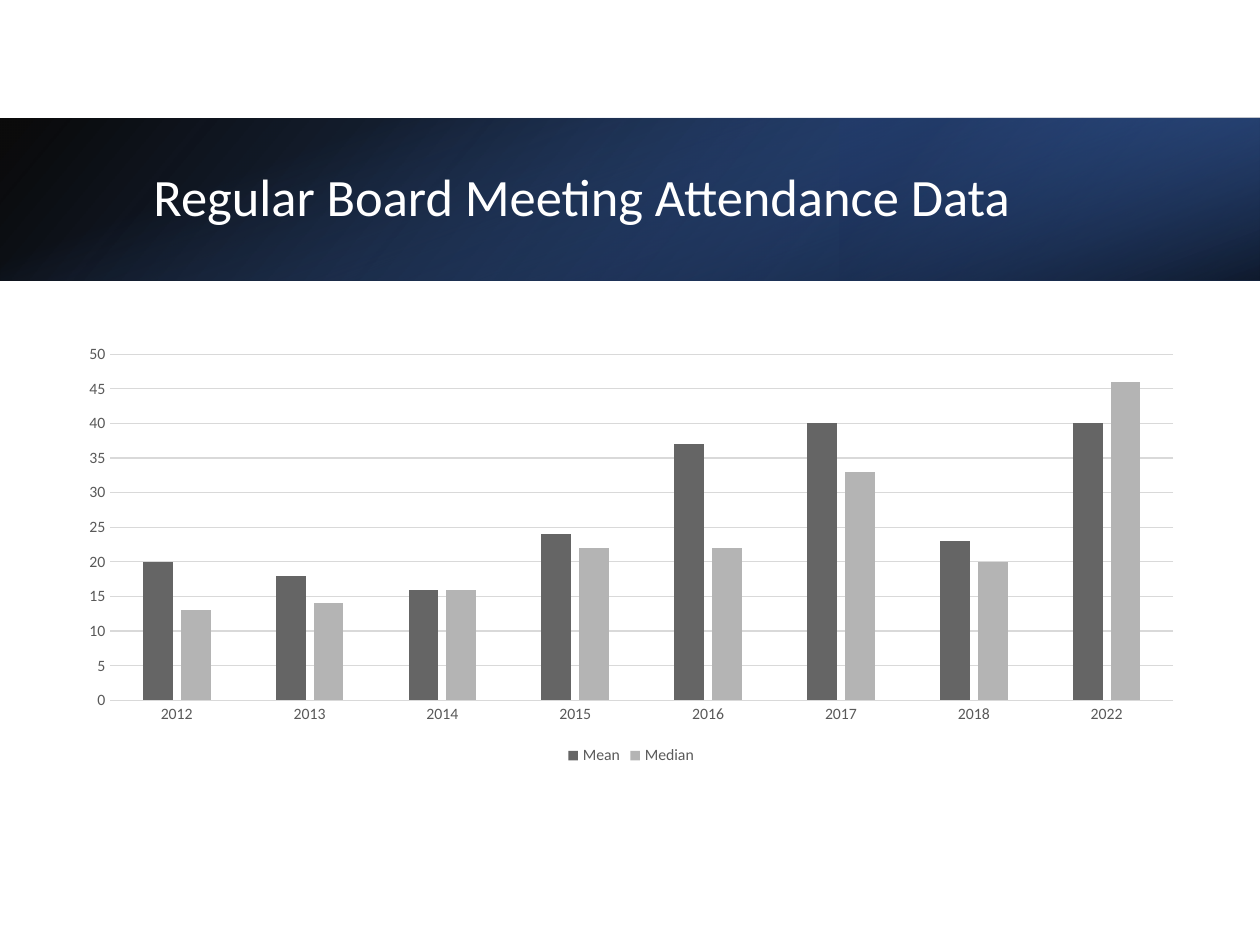
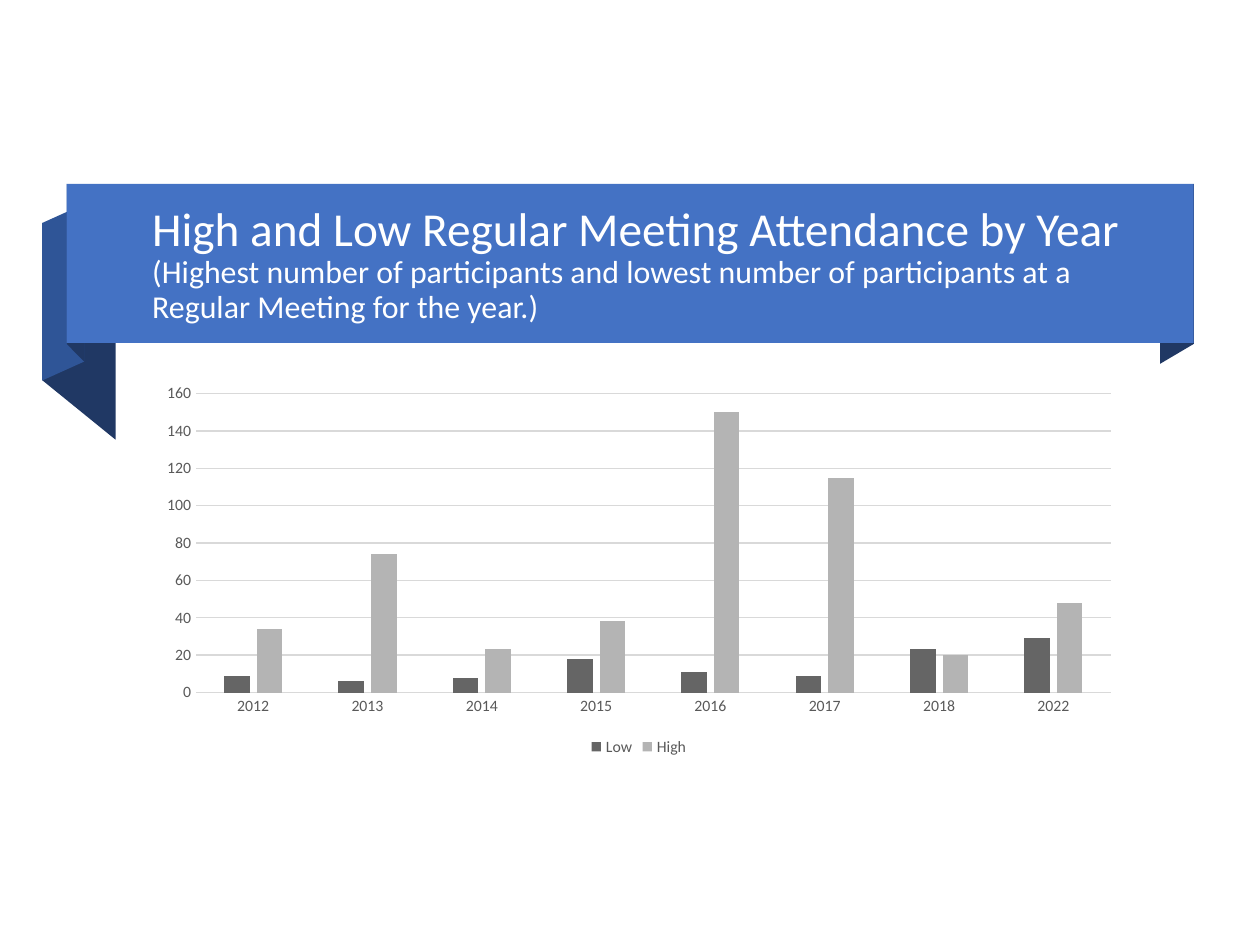
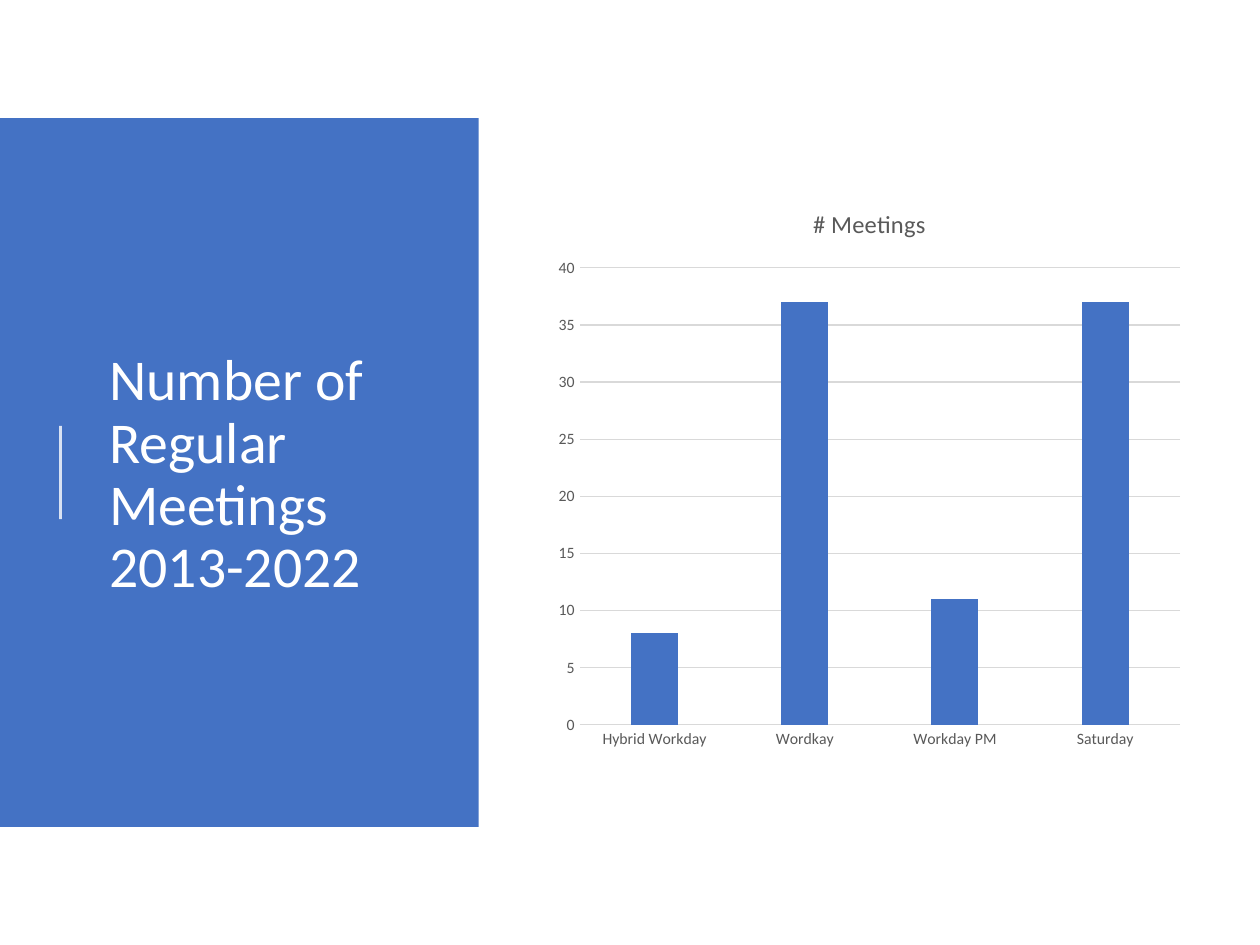
import dataclasses

import lxml.etree
import pptx
import pptx.chart.data
import pptx.dml.color
import pptx.enum.chart
import pptx.enum.shapes
import pptx.enum.text
import pptx.oxml.ns
import pptx.util


@dataclasses.dataclass(frozen=True)
class Theme:
    font: str = "Calibri"
    white: str = "FFFFFF"
    black: str = "000000"
    blue: str = "4472C4"
    deep: str = "2F5597"
    navy: str = "203864"
    dark: str = "656565"
    light: str = "B4B4B4"
    text: str = "595959"
    grid: str = "D9D9D9"
    label: float = 9
    base: float = 10
    head: float = 14
    sub: float = 18.2
    small: float = 27
    mid: float = 30
    large: float = 33


THEME = Theme()
WIDTH, HEIGHT = pptx.util.Inches(10), pptx.util.Inches(7.5)
COLS, ROWS = 40, 30
TOP = 3.75  # first row of the wide band and the side panel
YEARS = ["2012", "2013", "2014", "2015", "2016", "2017", "2018", "2022"]


# Grid and colour helpers
def col(num):
    return round(WIDTH * num / COLS)


def row(num):
    return round(HEIGHT * num / ROWS)


def place(left, top, wide, high):
    return col(left), row(top), col(wide), row(high)


def rgb(code):
    return pptx.dml.color.RGBColor.from_string(code)


def node(parent, tag, **attrs):
    child = lxml.etree.SubElement(parent, pptx.oxml.ns.qn(tag))
    for key, value in attrs.items():
        child.set(key, str(value))
    return child


def style(font, size, color):
    font.name, font.size = THEME.font, pptx.util.Pt(size)
    font.color.rgb = rgb(color)


# Shapes
def paint(shape, color):
    shape.shadow.inherit = False
    shape.fill.solid()
    shape.fill.fore_color.rgb = rgb(color)
    shape.line.fill.background()


def block(shapes, box, color):
    kind = pptx.enum.shapes.MSO_SHAPE.RECTANGLE
    shape = shapes.add_shape(kind, *place(*box))
    paint(shape, color)
    return shape


def fade(shape, stops, angle):
    """Fill with a gradient; each stop is position, colour, opacity."""
    props = shape._element.spPr
    old = props.find(pptx.oxml.ns.qn("a:solidFill"))
    grad = lxml.etree.Element(pptx.oxml.ns.qn("a:gradFill"), rotWithShape="1")
    marks = node(grad, "a:gsLst")
    for pos, color, alpha in stops:
        stop = node(marks, "a:gs", pos=pos * 1000)
        tint = node(stop, "a:srgbClr", val=color)
        node(tint, "a:alpha", val=alpha * 1000)
    node(grad, "a:lin", ang=angle * 60000, scaled=0)
    props.replace(old, grad)


def flip(shape):
    shape._element.spPr.find(pptx.oxml.ns.qn("a:xfrm")).set("flipH", "1")


def fold(shapes, start, end, drop, color):
    """Ribbon fold with two upright sides of equal length."""
    (left, high), (right, low) = start, end
    spots = [(left, high), (left, high + drop), (right, low + drop), (right, low)]
    spots = [(col(x), row(y)) for x, y in spots]
    path = shapes.build_freeform(*spots[0], scale=1.0)
    path.add_line_segments(spots[1:], close=True)
    paint(path.convert_to_shape(), color)


def rule(slide, start, end, color, alpha):
    kind = pptx.enum.shapes.MSO_CONNECTOR.STRAIGHT
    line = slide.shapes.add_connector(
        kind, col(start[0]), row(start[1]), col(end[0]), row(end[1]))
    line.line.width = pptx.util.Pt(1.5)
    line.line.color.rgb = rgb(color)
    props = line._element.spPr
    for tint in props.iter(pptx.oxml.ns.qn("a:srgbClr")):
        node(tint, "a:alpha", val=alpha * 1000)
    node(props, "a:effectLst")


def title(slide, box, *parts):
    """Title on the coloured ground; each part is wording and size."""
    frame = slide.shapes.add_textbox(*place(*box)).text_frame
    frame.word_wrap = True
    frame.vertical_anchor = pptx.enum.text.MSO_ANCHOR.MIDDLE
    para = frame.paragraphs[0]
    para.line_spacing = 0.9
    for words, size in parts:
        run = para.add_run()
        run.text = words
        style(run.font, size, THEME.white)


# Charts
def chart(slide, box, cats, series, top, step, head=None):
    """Column chart; each series is name, values, colour."""
    data = pptx.chart.data.CategoryChartData()
    data.categories = cats
    for name, vals, _ in series:
        data.add_series(name, vals)
    kind = pptx.enum.chart.XL_CHART_TYPE.COLUMN_CLUSTERED
    graph = slide.shapes.add_chart(kind, *place(*box), data).chart
    style(graph.font, THEME.base, THEME.black)

    plot = graph.plots[0]
    plot.gap_width, plot.overlap = 219, -27
    plot.vary_by_categories = False
    for bars, (_, _, color) in zip(plot.series, series):
        bars.format.fill.solid()
        bars.format.fill.fore_color.rgb = rgb(color)

    cat, val = graph.category_axis, graph.value_axis
    for axis in (cat, val):
        axis.major_tick_mark = pptx.enum.chart.XL_TICK_MARK.NONE
        axis.minor_tick_mark = pptx.enum.chart.XL_TICK_MARK.NONE
        style(axis.tick_labels.font, THEME.label, THEME.text)
    val.minimum_scale, val.maximum_scale, val.major_unit = 0, top, step
    val.has_major_gridlines = True
    for line in (cat.format.line, val.major_gridlines.format.line):
        line.width = pptx.util.Pt(0.75)
        line.color.rgb = rgb(THEME.grid)
    val.format.line.fill.background()

    graph.has_title = head is not None
    if head:
        graph.chart_title.text_frame.text = head
        run = graph.chart_title.text_frame.paragraphs[0].runs[0]
        style(run.font, THEME.head, THEME.text)
        run.font.bold = False
        graph.chart_title.include_in_layout = False
    graph.has_legend = len(series) > 1
    if graph.has_legend:
        graph.legend.position = pptx.enum.chart.XL_LEGEND_POSITION.BOTTOM
        graph.legend.include_in_layout = False
        style(graph.legend.font, THEME.label, THEME.text)


# Title grounds
def band(slide, high=5.16):
    """Full-width band of three layered gradients."""
    shapes = slide.shapes
    base = block(shapes, (0, TOP, COLS, high), THEME.deep)
    fade(base, [(0, THEME.black, 96), (100, THEME.deep, 100)], 140)
    flip(base)

    third = COLS / 3
    glow = block(shapes, (COLS - third, TOP, third, high), THEME.blue)
    fade(glow, [(19, THEME.navy, 68), (100, THEME.blue, 79)], 320)
    flip(glow)
    glow.rotation = 180

    left, top = (COLS - high) / 2, TOP + (high - COLS) / 2
    shade = block(shapes, (left, top, high, COLS), THEME.blue)
    fade(shade, [(23, THEME.blue, 0), (99, THEME.black, 74)], 340)
    shade.rotation = 90


def ribbon(slide):
    shapes = slide.shapes.add_group_shape().shapes
    fold(shapes, (37.9, 5.84), (36.83, 6.47), 5.08, THEME.navy)
    fold(shapes, (3.67, 9), (1.34, 7.11), 4.96, THEME.navy)
    fold(shapes, (2.67, 6.48), (1.34, 7.08), 5, THEME.deep)
    fold(shapes, (2.67, 6.4), (2.12, 5.84), 5.08, THEME.navy)
    block(shapes, (2.12, 5.84, 35.78, 5.05), THEME.blue)


# Slides
def mean(slide):
    band(slide)
    title(slide, (4.48, 4.88, 32.96, 2.88),
          ("Regular Board Meeting Attendance Data", THEME.mid))
    chart(slide, (2.12, 10.68, 35.84, 13.76), YEARS, [
        ("Mean", [20, 18, 16, 24, 37, 40, 23, 40], THEME.dark),
        ("Median", [13, 14, 16, 22, 22, 33, 20, 46], THEME.light),
    ], 50, 5)


def range_(slide):
    ribbon(slide)
    title(slide, (4.44, 6.24, 32.8, 4.36),
          ("High and Low Regular Meeting Attendance by Year ", THEME.small),
          ("(Highest number of participants and lowest number of "
           "participants at a Regular Meeting for the year.)", THEME.sub))
    chart(slide, (4.68, 11.96, 31.2, 12.2), YEARS, [
        ("Low", [9, 6, 8, 18, 11, 9, 23, 29], THEME.dark),
        ("High", [34, 74, 23, 38, 150, 115, 20, 48], THEME.light),
    ], 160, 20)


def count(slide):
    block(slide.shapes, (0, TOP, 15.2, 22.5), THEME.blue)
    title(slide, (3.08, 6.08, 11.04, 18.04),
          ("Number of Regular Meetings 2013-2022", THEME.large))
    rule(slide, (1.92, 16.48), (1.92, 13.52), THEME.white, 80)
    chart(slide, (17.32, 5.84, 20.56, 18.28),
          ["Hybrid Workday", "Wordkay", "Workday PM", "Saturday"],
          [("# Meetings", [8, 37, 11, 37], THEME.blue)],
          40, 5, "# Meetings")


def main():
    deck = pptx.Presentation()
    deck.slide_width, deck.slide_height = WIDTH, HEIGHT
    for draw in (mean, range_, count):
        draw(deck.slides.add_slide(deck.slide_layouts[6]))
    deck.save("out.pptx")


if __name__ == "__main__":
    main()
